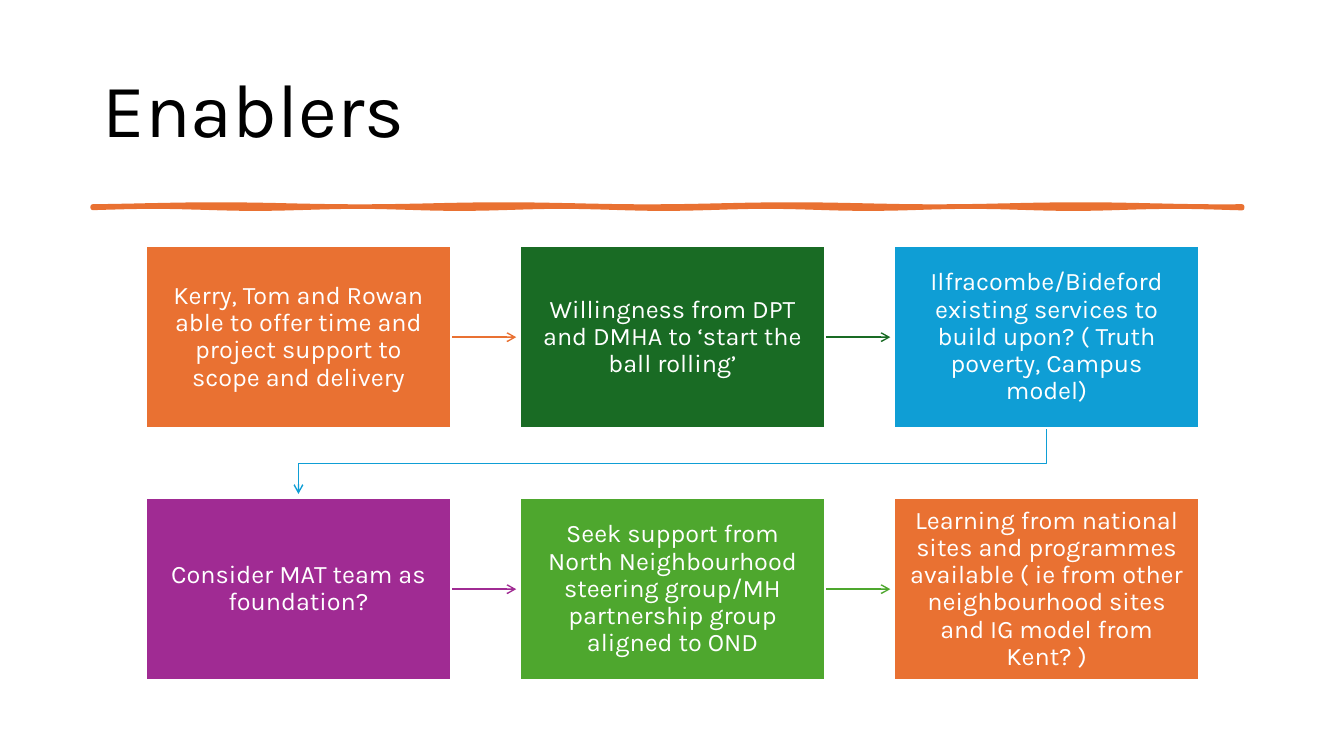
from dataclasses import dataclass
from math import sin

from lxml import etree
from pptx import Presentation, util as u
from pptx.dml.color import RGBColor
from pptx.enum import shapes, text
from pptx.oxml.ns import qn


@dataclass(frozen=True)
class Theme:
    font: str = "Karla"
    head: int = 54
    body: int = 18
    black: str = "000000"
    white: str = "FFFFFF"
    orange: str = "E97132"
    green: str = "196B24"
    blue: str = "0F9ED5"
    plum: str = "A02B93"
    lime: str = "4EA72E"


T = Theme()
WIDE, HIGH = 13.33, 7.5
COLS = 3
STEPS = [
    ("Kerry, Tom and Rowan able to offer time and project support to scope and delivery", T.orange),
    ("Willingness from DPT and DMHA to ‘start the ball rolling’", T.green),
    ("Ilfracombe/Bideford existing services to build upon? ( Truth poverty, Campus model)", T.blue),
    ("Consider MAT team as foundation?", T.plum),
    ("Seek support from North Neighbourhood steering group/MH partnership group aligned to OND", T.lime),
    ("Learning from national sites and programmes available ( ie from other neighbourhood sites "
     "and IG model from Kent? )", T.orange),
]


def inch(*vals):
    return [u.Inches(v) for v in vals]


def write(shape, words, size=T.body, color=T.white, align=text.PP_ALIGN.CENTER, pad=(0.15, 0.16)):
    frame = shape.text_frame
    frame.word_wrap = True
    frame.vertical_anchor = text.MSO_ANCHOR.MIDDLE
    frame.margin_left = frame.margin_right = u.Inches(pad[0])
    frame.margin_top = frame.margin_bottom = u.Inches(pad[1])
    para = frame.paragraphs[0]
    para.alignment = align
    para.line_spacing = 0.9
    run = para.add_run()
    run.text = words
    run.font.name = T.font
    run.font.size = u.Pt(size)
    run.font.color.rgb = RGBColor.from_string(color)


def stroke(shape, color, width, arrow=False):
    shape.line.color.rgb = RGBColor.from_string(color)
    shape.line.width = u.Pt(width)
    if arrow:
        line = shape.line._get_or_add_ln()
        etree.SubElement(line, qn("a:tailEnd"), type="arrow")


def trace(slide, points, close):
    pen = slide.shapes.build_freeform(*inch(*points[0]), scale=1.0)
    pen.add_line_segments([inch(*p) for p in points[1:]], close=close)
    shape = pen.convert_to_shape()
    shape.shadow.inherit = False
    return shape


def title(slide, left, top, width, height):
    box = slide.shapes.add_textbox(*inch(left, top, width, height))
    write(box, "Enablers", size=T.head, color=T.black, align=text.PP_ALIGN.LEFT, pad=(0.1, 0.05))


def rule(slide, left, top, width, height):
    count = 114
    xs = [left + width * i / count for i in range(count + 1)]
    upper = [(x, top + 0.01 * sin(2.2 * x)) for x in xs]
    lower = [(x, top + height + 0.01 * sin(3.1 * x)) for x in reversed(xs)]
    band = trace(slide, upper + lower, True)
    band.fill.solid()
    band.fill.fore_color.rgb = RGBColor.from_string(T.orange)
    stroke(band, T.orange, 3.25)


def arrow(slide, x, y, end, color):
    link = slide.shapes.add_connector(shapes.MSO_CONNECTOR.STRAIGHT, *inch(x, y, end, y))
    etree.SubElement(link._element.spPr, qn("a:effectLst"))
    stroke(link, color, 1, arrow=True)
    return link


def turn(slide, x, y, end, low, color):
    mid = y + 0.35
    bend = trace(slide, [(x, y), (x, mid), (end, mid), (end, low)], False)
    bend.fill.background()
    stroke(bend, color, 1, arrow=True)


def card(slide, place, words, color):
    box = slide.shapes.add_shape(shapes.MSO_SHAPE.RECTANGLE, *inch(*place))
    box.shadow.inherit = False
    box.fill.solid()
    box.fill.fore_color.rgb = RGBColor.from_string(color)
    stroke(box, T.white, 1.5)
    write(box, words)
    return box


def flow(slide, left, top, width, height):
    wide, high, gap = 3.02, 1.81, 0.04
    dx = (width - wide) / (COLS - 1)
    dy = height - high
    spots = [(left + i % COLS * dx, top + i // COLS * dy) for i in range(len(STEPS))]
    links = {}
    for i, (x, y) in enumerate(spots[:-1]):
        color = STEPS[i][1]
        after, below = spots[i + 1]
        if below == y:
            links[i] = arrow(slide, x + wide, y + high / 2, after - gap, color)
        else:
            turn(slide, x + wide / 2, y + high, after + wide / 2, below - gap, color)
    for i, (words, color) in enumerate(STEPS):
        box = card(slide, (*spots[i], wide, high), words, color)
        if i in links:
            links[i].begin_connect(box, 3)


def main():
    deck = Presentation()
    deck.slide_width, deck.slide_height = inch(WIDE, HIGH)
    slide = deck.slides.add_slide(deck.slide_layouts[6])
    title(slide, 0.92, 0.4, 11.5, 1.45)
    rule(slide, 0.92, 2.04, 11.4, 0.02)
    flow(slide, 1.45, 2.44, 10.44, 4.31)
    deck.save("out.pptx")


if __name__ == "__main__":
    main()
